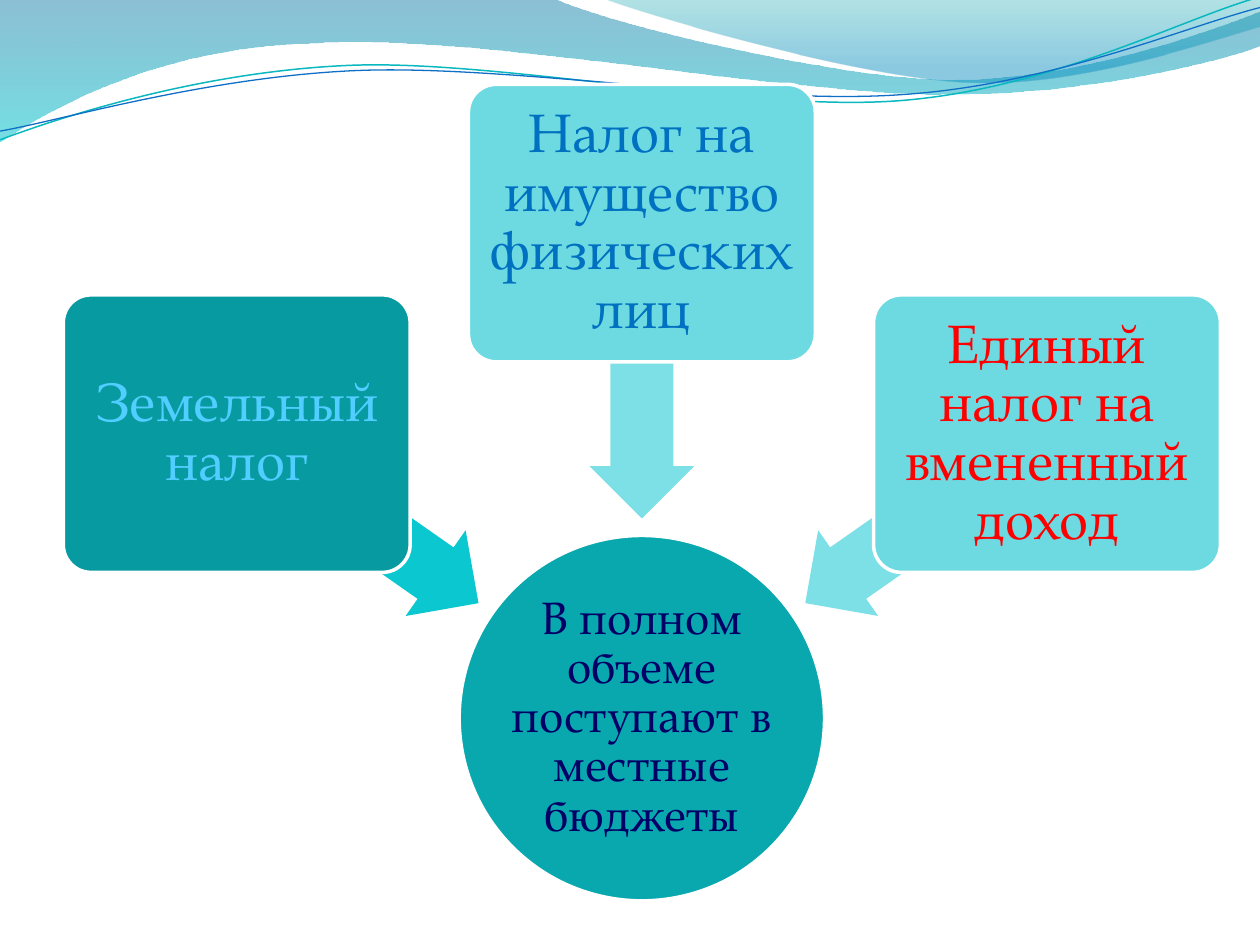
import pptx
import pptx.util
import pptx.dml.color
import pptx.enum.shapes
import pptx.enum.text
import pptx.oxml
import pptx.oxml.ns

Pt = pptx.util.Pt
KIND = pptx.enum.shapes.MSO_SHAPE
NS = pptx.oxml.ns.nsdecls("a")
FONT = "TeX Gyre Pagella"
HUE = {
    "white": "FFFFFF", "navy": "000066", "sky": "4FCEFF", "blue": "0070C0",
    "red": "FF0000", "hub": "09A7AE", "deep": "089AA1", "pale": "6DDAE2",
    "teal": "0BC7CF", "mist": "7EE0E7", "line1": "0AB8BF", "line2": "0F6FC6",
    "band1": "0074A1", "band2": "00C6CF", "fan1": "00A1A9", "fan2": "008BBF",
}

# Wave outlines: two numbers are a line end, six are a cubic curve
BAND = [(0, 0), (316.8, -0.7), (342.7, 12.2, 478, 45.4, 545.8, 45.4),
        (614.2, 45.4, 689.8, 18.7, 720, 6.5), (720.7, 25.9),
        (707.8, 31.7, 626.4, 54.7, 537.1, 54),
        (447.8, 54, 275, 20.2, 185, 24.5),
        (92.9, 25.9, 33.1, 59.8, -0.7, 81.4)]
FAN = [(344.9, -0.7), (366.5, 7.9, 491, 44.6, 553.7, 46.8),
       (616.3, 49.7, 691.9, 23, 720, 15.1), (720, 0)]
WAVE1 = [(0, 79.9), (34.6, 67, 113.8, 41, 199.4, 37.4),
         (284.4, 33.8, 427, 64.1, 513.4, 57.6),
         (599.8, 51.1, 675.4, 10.8, 718.6, -1.4)]
WAVE2 = [(0, 74.9), (33.8, 69.1, 118.1, 43.9, 203.8, 40.3),
         (290.2, 36.7, 429.8, 60.5, 516.2, 54),
         (601.9, 48.2, 677.5, 15.1, 720, 4.3)]

# Diagram measures
MID = 366.8
HUB_TOP, HUB = 306, 208.8
BOX_W, BOX_H, BOX_GAP = 198.2, 158.6, 231.5
ARROW_W, ARROW_H, ARROW_GAP = 168.5, 59.8, 162.4
# side, text, text colour, box colour, box top, arrow colour, arrow middle, turn
TAXES = [
    (-1, "Земельный налог", "sky", "deep", 168.5, "teal", 296.3, 215),
    (0, "Налог на имущество физических лиц", "blue", "pale", 48.2,
     "mist", 212, 270),
    (1, "Единый налог на вмененный доход", "red", "pale", 168.5,
     "mist", 296.3, 325),
]


def rgb(name):
    return pptx.dml.color.RGBColor.from_string(HUE[name])


def outline(slide, steps, close):
    """Freeform through the step ends, with its curved steps bent."""
    ends = [(Pt(step[-2]), Pt(step[-1])) for step in steps]
    pen = slide.shapes.build_freeform(*ends[0])
    pen.add_line_segments(ends[1:], close=close)
    shape = pen.convert_to_shape()
    shape.shadow.inherit = False
    lines = list(shape.element.iter(pptx.oxml.ns.qn("a:lnTo")))
    for line, step in zip(lines, steps[1:]):
        if len(step) == 6:
            dots = "".join(
                f'<a:pt x="{Pt(x) - shape.left}" y="{Pt(y) - shape.top}"/>'
                for x, y in zip(step[::2], step[1::2]))
            curve = pptx.oxml.parse_xml(
                f'<a:cubicBezTo {NS}>{dots}</a:cubicBezTo>')
            line.getparent().replace(line, curve)
    return shape


def blend(slide, steps, stops):
    """Closed area with a see-through gradient running downwards."""
    shape = outline(slide, steps, True)
    shape.line.fill.background()
    marks = "".join(
        f'<a:gs pos="{pos * 1000}"><a:srgbClr val="{HUE[name]}">'
        f'<a:alpha val="{alpha * 1000}"/></a:srgbClr></a:gs>'
        for pos, name, alpha in stops)
    grad = pptx.oxml.parse_xml(
        f'<a:gradFill {NS}><a:gsLst>{marks}</a:gsLst>'
        '<a:lin ang="5400000" scaled="0"/></a:gradFill>')
    geom = shape.element.spPr.find(pptx.oxml.ns.qn("a:custGeom"))
    geom.addnext(grad)


def wave(slide, steps, color, width):
    shape = outline(slide, steps, False)
    shape.fill.background()
    shape.line.color.rgb = rgb(color)
    shape.line.width = Pt(width)


def solid(slide, kind, left, top, width, height, color, edge=None, adj=()):
    shape = slide.shapes.add_shape(kind, Pt(left), Pt(top),
                                   Pt(width), Pt(height))
    shape.shadow.inherit = False
    shape.fill.solid()
    shape.fill.fore_color.rgb = rgb(color)
    if edge:
        shape.line.color.rgb = rgb(edge)
        shape.line.width = Pt(2)
    else:
        shape.line.fill.background()
    for i, value in enumerate(adj):
        shape.adjustments[i] = value
    return shape


def write(shape, text, size, color, inset):
    frame = shape.text_frame
    frame.word_wrap = True
    frame.vertical_anchor = pptx.enum.text.MSO_ANCHOR.MIDDLE
    frame.margin_left = frame.margin_right = Pt(inset)
    frame.margin_top = frame.margin_bottom = Pt(inset)
    para = frame.paragraphs[0]
    para.alignment = pptx.enum.text.PP_ALIGN.CENTER
    para.line_spacing = 0.9
    run = para.add_run()
    run.text = text
    run.font.name = FONT
    run.font.size = Pt(size)
    run.font.color.rgb = rgb(color)


def main():
    deck = pptx.Presentation()
    deck.slide_width, deck.slide_height = Pt(720), Pt(540)
    slide = deck.slides.add_slide(deck.slide_layouts[6])

    # Waves along the top
    blend(slide, BAND, [(0, "band1", 45), (100, "band2", 55)])
    blend(slide, FAN, [(0, "fan1", 30), (80, "fan2", 45)])
    wave(slide, WAVE1, "line1", 0.85)
    wave(slide, WAVE2, "line2", 0.75)

    # Hub; the text runs slightly past the circle's inner square
    hub = solid(slide, KIND.OVAL, MID - HUB / 2, HUB_TOP, HUB, HUB,
                "hub", "white")
    write(hub, "В полном объеме поступают в местные бюджеты",
          26, "navy", -4)

    # Taxes, each with its arrow to the hub
    for side, text, ink, fill, top, tint, mid, turn in TAXES:
        arrow = solid(slide, KIND.LEFT_ARROW,
                      MID + side * ARROW_GAP - ARROW_W / 2, mid - ARROW_H / 2,
                      ARROW_W, ARROW_H, tint, adj=(0.6, 0.5))
        arrow.rotation = turn
        box = solid(slide, KIND.ROUNDED_RECTANGLE,
                    MID + side * BOX_GAP - BOX_W / 2, top, BOX_W, BOX_H,
                    fill, "white", (0.1,))
        write(box, text, 31, ink, 4.3)

    deck.save("out.pptx")


if __name__ == "__main__":
    main()
